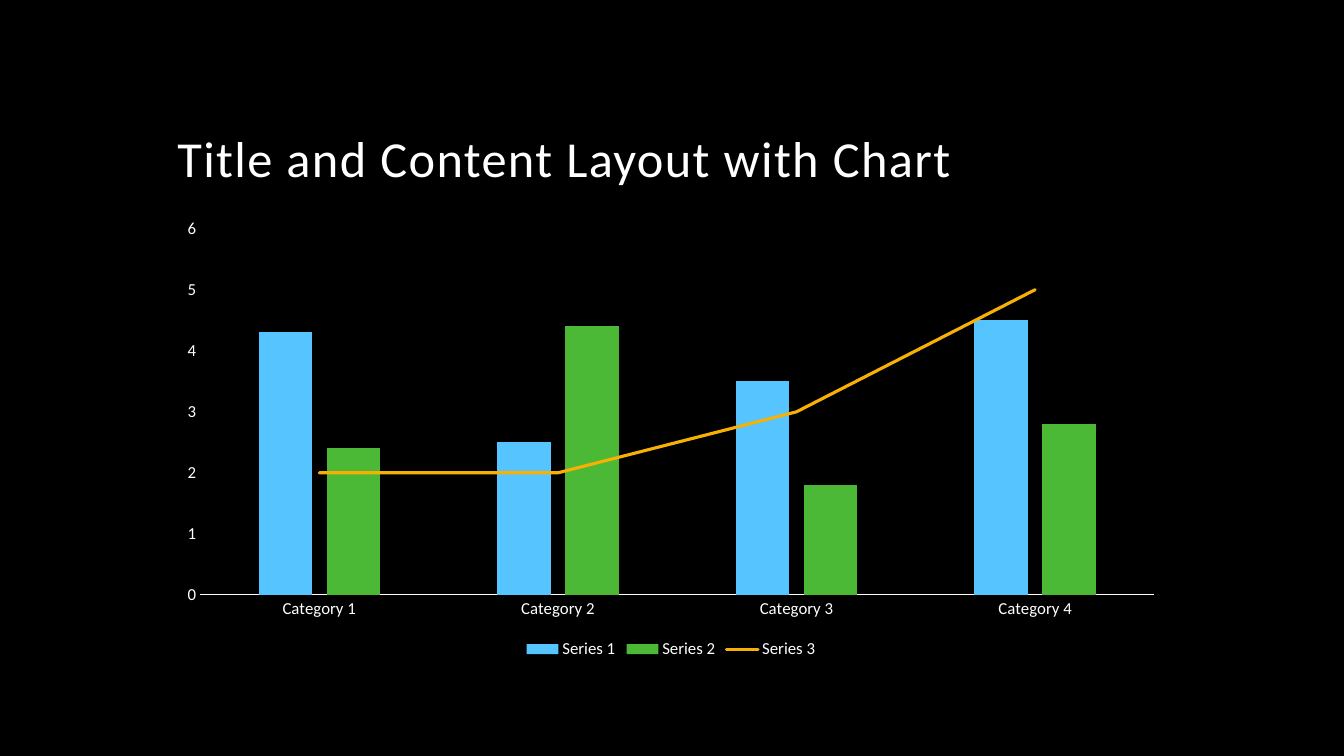
from lxml import etree
from pptx import Presentation
from pptx.chart.data import CategoryChartData
from pptx.dml.color import RGBColor
from pptx.enum import chart as charts, text
from pptx.oxml import ns
from pptx.util import Inches, Pt

BLACK = RGBColor(0x00, 0x00, 0x00)
WHITE = RGBColor(0xFF, 0xFF, 0xFF)
BLUE = RGBColor(0x56, 0xC5, 0xFF)
GREEN = RGBColor(0x4B, 0xB8, 0x36)
AMBER = RGBColor(0xF8, 0xB0, 0x04)
FONT = "Calibri"


def set_font(font, size):
    font.name = FONT
    font.size = Pt(size)
    font.color.rgb = WHITE


deck = Presentation()
deck.slide_width = Inches(13.33)
deck.slide_height = Inches(7.5)
page = deck.slides.add_slide(deck.slide_layouts[5])
page.background.fill.solid()
page.background.fill.fore_color.rgb = BLACK

title = page.shapes.title
title.left, title.top = Inches(1.66), Inches(0.42)
title.width, title.height = Inches(10), Inches(1.5)
frame = title.text_frame
frame.text = "Title and Content Layout with Chart"
frame.word_wrap = True
frame.auto_size = text.MSO_AUTO_SIZE.NONE
frame.vertical_anchor = text.MSO_ANCHOR.BOTTOM
para = frame.paragraphs[0]
para.alignment = text.PP_ALIGN.LEFT
para.line_spacing = 0.9
set_font(para.font, 36)
para.runs[0].font._element.set("spc", "100")

data = CategoryChartData()
data.categories = [f"Category {number}" for number in range(1, 5)]
data.add_series("Series 1", (4.3, 2.5, 3.5, 4.5))
data.add_series("Series 2", (2.4, 4.4, 1.8, 2.8))
data.add_series("Series 3", (2, 2, 3, 5))
chart = page.shapes.add_chart(
    charts.XL_CHART_TYPE.COLUMN_CLUSTERED,
    Inches(1.66), Inches(2.08), Inches(9.99), Inches(4.5), data,
).chart
set_font(chart.font, 10)
chart.has_title = False
chart.has_legend = True
chart.legend.position = charts.XL_LEGEND_POSITION.BOTTOM
chart.legend.include_in_layout = False
set_font(chart.legend.font, 12)

for axis in (chart.category_axis, chart.value_axis):
    axis.has_major_gridlines = False
    axis.major_tick_mark = axis.minor_tick_mark = charts.XL_TICK_MARK.NONE
    set_font(axis.tick_labels.font, 12)
chart.category_axis.format.line.color.rgb = WHITE
chart.category_axis.format.line.width = Pt(0.75)
chart.value_axis.format.line.fill.background()
chart.value_axis.minimum_scale = 0
chart.value_axis.maximum_scale = 6
chart.value_axis.major_unit = 1

columns = chart.plots[0]
columns.vary_by_categories = False
columns.gap_width = 219
columns.overlap = -27
first, second, trend = columns.series
for series, color in ((first, BLUE), (second, GREEN)):
    series.format.fill.solid()
    series.format.fill.fore_color.rgb = color
trend.format.line.color.rgb = AMBER
trend.format.line.width = Pt(2.25)

trend_xml = trend._element
trend_shape = trend_xml.find(ns.qn("c:spPr"))
trend_shape.find(ns.qn("a:ln")).set("cap", "rnd")
for invert in trend_xml.findall(ns.qn("c:invertIfNegative")):
    trend_xml.remove(invert)
marker = etree.Element(ns.qn("c:marker"))
etree.SubElement(marker, ns.qn("c:symbol")).set("val", "none")
trend_shape.addnext(marker)
etree.SubElement(trend_xml, ns.qn("c:smooth")).set("val", "0")

columns_xml = columns._element
line_xml = etree.Element(ns.qn("c:lineChart"))
etree.SubElement(line_xml, ns.qn("c:grouping")).set("val", "standard")
etree.SubElement(line_xml, ns.qn("c:varyColors")).set("val", "0")
line_xml.append(trend_xml)
etree.SubElement(line_xml, ns.qn("c:marker")).set("val", "1")
for axis_id in columns_xml.findall(ns.qn("c:axId")):
    etree.SubElement(line_xml, ns.qn("c:axId")).set("val", axis_id.get("val"))
columns_xml.addnext(line_xml)

deck.save("out.pptx")
